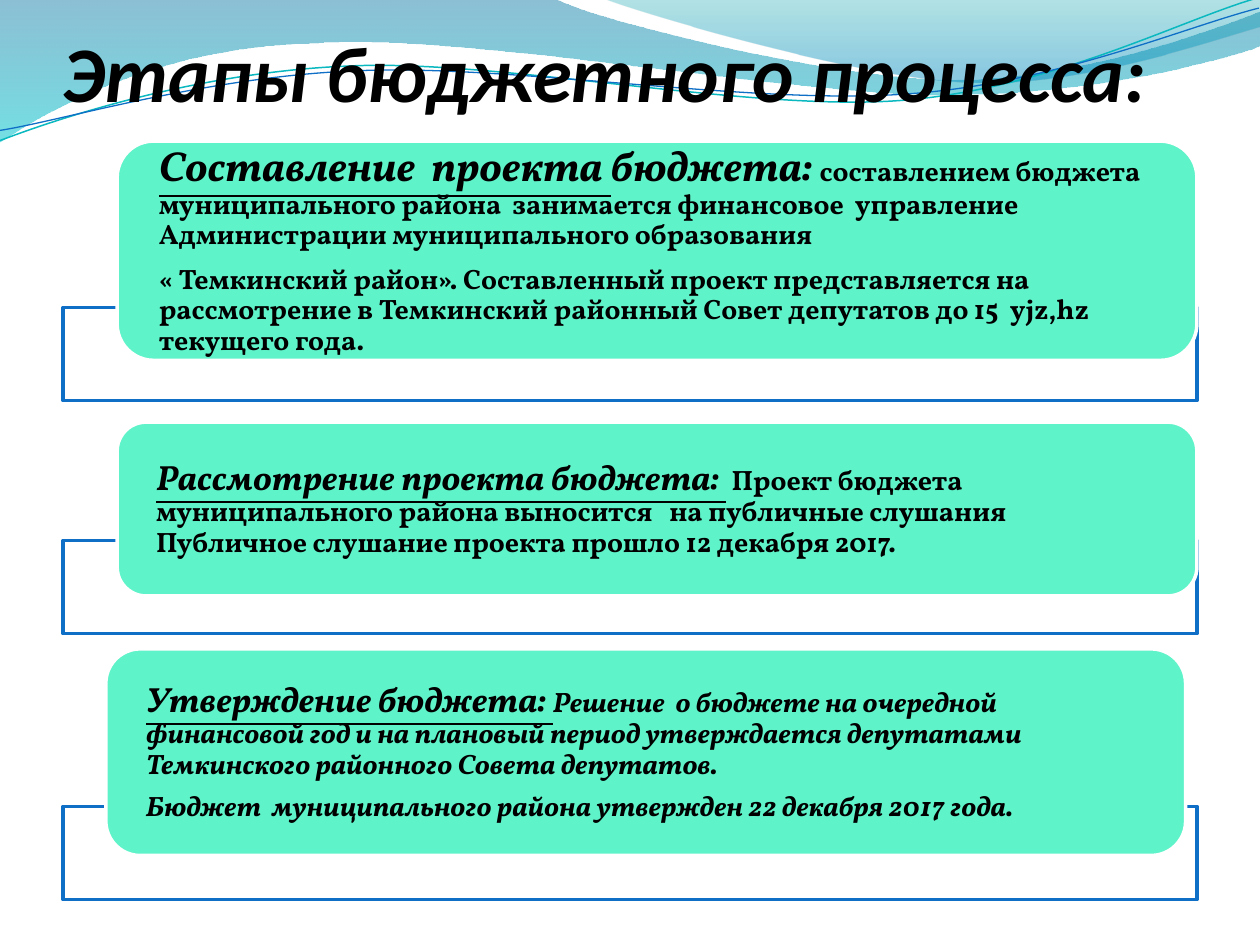
from dataclasses import dataclass

from lxml import etree
from pptx import Presentation
from pptx.dml.color import RGBColor
from pptx.enum.shapes import MSO_SHAPE
from pptx.enum.text import MSO_ANCHOR
from pptx.oxml.ns import qn
from pptx.util import Inches, Pt

RECTANGLE = MSO_SHAPE.RECTANGLE
ROUNDED = MSO_SHAPE.ROUNDED_RECTANGLE
MIDDLE = MSO_ANCHOR.MIDDLE
BOTTOM = MSO_ANCHOR.BOTTOM


@dataclass(frozen=True)
class Theme:
    title_font: str = "Calibri"
    body_font: str = "Vollkorn"
    title_size: float = 45
    first_heading_size: float = 24
    heading_size: float = 20
    body_size: float = 16
    ink: str = "000000"
    white: str = "FFFFFF"
    mint: str = "5FF3CA"
    blue: str = "0F6FC6"
    teal: str = "0AB8BF"
    wide_wave: tuple = ((0, "0074A1", 45), (1, "00C6CF", 55))
    right_wave: tuple = ((0, "00A1A9", 30), (0.8, "008BBF", 45))


@dataclass(frozen=True)
class Span:
    text: str
    size: float
    italic: bool = False
    underline: bool = False


class SlideWriter:
    def __init__(self, page, theme):
        self.page = page
        self.theme = theme

    def set_opacity(self, shape, percents):
        colors = shape._element.spPr.iter(qn("a:srgbClr"))
        for color, percent in zip(colors, percents):
            etree.SubElement(color, qn("a:alpha"), val=str(percent * 1000))

    def outline(self, shape, color, width):
        shape.line.color.rgb = RGBColor.from_string(color)
        shape.line.width = Pt(width)

    def freeform(self, start, segments, closed):
        points = [(Inches(x), Inches(y)) for segment in segments for x, y in segment]
        builder = self.page.shapes.build_freeform(Inches(start[0]), Inches(start[1]))
        builder.add_line_segments(points, close=closed)
        shape = builder.convert_to_shape()
        shape.shadow.inherit = False
        steps = iter(list(shape._element.iter(qn("a:lnTo"))))
        for segment in segments:
            first, *others = [next(steps) for _ in segment]
            if others:
                curve = etree.Element(qn("a:cubicBezTo"))
                first.addprevious(curve)
                for step in (first, *others):
                    curve.append(step[0])
                    step.getparent().remove(step)
        return shape

    def wave(self, start, segments, stops):
        shape = self.freeform(start, segments, True)
        shape.line.fill.background()
        shape.fill.gradient()
        shape.fill.gradient_angle = 270
        for stop, (position, color, _) in zip(shape.fill.gradient_stops, stops):
            stop.position = position
            stop.color.rgb = RGBColor.from_string(color)
        self.set_opacity(shape, [opacity for _, _, opacity in stops])

    def strand(self, start, segments, color, width):
        shape = self.freeform(start, segments, False)
        shape.rotation = 357.3
        shape.fill.background()
        self.outline(shape, color, width)

    def panel(self, kind, frame, fill, line, opacity=None):
        shape = self.page.shapes.add_shape(kind, *map(Inches, frame))
        shape.shadow.inherit = False
        shape.fill.solid()
        shape.fill.fore_color.rgb = RGBColor.from_string(fill)
        if opacity is not None:
            self.set_opacity(shape, [opacity])
        self.outline(shape, line, 2)

    def space_after(self, para, percent):
        spacing = etree.SubElement(para._p.get_or_add_pPr(), qn("a:spcAft"))
        etree.SubElement(spacing, qn("a:spcPct"), val=str(percent * 1000))

    def text(self, frame, paragraphs, font, anchor, margins, line_spacing=None, after=None):
        box = self.page.shapes.add_textbox(*map(Inches, frame))
        body = box.text_frame
        body.word_wrap = True
        body.vertical_anchor = anchor
        body.margin_left, body.margin_top, body.margin_right, body.margin_bottom = map(
            Inches, margins)
        for index, spans in enumerate(paragraphs):
            para = body.add_paragraph() if index else body.paragraphs[0]
            para.line_spacing = line_spacing
            if after is not None:
                self.space_after(para, after)
            for span in spans:
                run = para.add_run()
                run.text = span.text
                run.font.name = font
                run.font.size = Pt(span.size)
                run.font.bold = True
                run.font.italic = span.italic
                run.font.underline = span.underline
                run.font.color.rgb = RGBColor.from_string(self.theme.ink)

    def stage(self, bar_top, left, top, height, paragraphs):
        theme = self.theme
        width = 8.57
        inset = round(0.05 * height, 2)
        self.panel(RECTANGLE, (0.5, bar_top, 9, 0.74), theme.white, theme.blue, 90)
        self.panel(ROUNDED, (left, top, width, height), theme.mint, theme.white)
        self.text((left + inset, top + inset, width - 2 * inset, height - 2 * inset),
                  paragraphs, theme.body_font, MIDDLE, (0.24, 0, 0.24, 0), 0.9, 35)


def draw_waves(writer):
    theme = writer.theme
    writer.wave((0, 0), [
        [(4.4, -0.01)],
        [(4.76, 0.17), (6.64, 0.63), (7.58, 0.63)],
        [(8.53, 0.63), (9.58, 0.26), (10, 0.09)],
        [(10.01, 0.36)],
        [(9.83, 0.44), (8.7, 0.76), (7.46, 0.75)],
        [(6.22, 0.75), (3.82, 0.28), (2.57, 0.34)],
        [(1.29, 0.36), (0.46, 0.83), (-0.01, 1.13)],
        [(0, 0)],
    ], theme.wide_wave)
    writer.wave((4.79, -0.01), [
        [(5.09, 0.11), (6.82, 0.62), (7.69, 0.65)],
        [(8.56, 0.69), (9.61, 0.32), (10, 0.21)],
        [(10, 0)],
        [(4.79, -0.01)],
    ], theme.right_wave)
    writer.strand((-0.02, 0.88), [
        [(0.47, 0.72), (1.58, 0.41), (2.78, 0.42)],
        [(3.96, 0.42), (5.91, 0.93), (7.12, 0.9)],
        [(8.32, 0.87), (9.4, 0.36), (10, 0.22)],
    ], theme.teal, 0.85)
    writer.strand((-0.02, 0.8), [
        [(0.46, 0.75), (1.64, 0.45), (2.83, 0.46)],
        [(4.03, 0.46), (5.96, 0.88), (7.16, 0.85)],
        [(8.35, 0.83), (9.42, 0.42), (10.01, 0.3)],
    ], theme.blue, 0.75)


def main():
    theme = Theme()
    deck = Presentation()
    deck.slide_width, deck.slide_height = Inches(10), Inches(7.5)
    writer = SlideWriter(deck.slides.add_slide(deck.slide_layouts[6]), theme)

    draw_waves(writer)
    writer.text((0.5, 0.16, 9, 0.78),
                [[Span("Этапы бюджетного процесса:", theme.title_size, True)]],
                theme.title_font, BOTTOM, (0, 0.05, 0, 0))

    large, medium, small = theme.first_heading_size, theme.heading_size, theme.body_size
    drafting = [
        [Span("Составление  проекта ", large, True, True),
         Span("бюджета: ", large, True),
         Span("составлением бюджета муниципального района  занимается финансовое  "
              "управление Администрации муниципального образования", small)],
        [Span("« Темкинский район». Составленный проект представляется на рассмотрение "
              "в Темкинский районный Совет депутатов до 15  yjz,hz  текущего года.", small)],
    ]
    review = [
        [Span("Рассмотрение проекта бюджета: ", medium, True, True),
         Span(" Проект бюджета муниципального района выносится   на публичные слушания   "
              "Публичное слушание проекта прошло 12 декабря 2017.", small)],
    ]
    approval = [
        [Span("Утверждение бюджета: ", medium, True, True),
         Span("Решение  о бюджете на очередной финансовой год и на плановый период "
              "утверждается депутатами Темкинского районного Совета депутатов.", small, True)],
        [Span("Бюджет  муниципального района утвержден 22 декабря 2017 года.", small, True)],
    ]
    writer.stage(2.44, 0.93, 1.12, 1.74, drafting)
    writer.stage(4.29, 0.93, 3.35, 1.38, review)
    writer.stage(6.4, 0.84, 5.15, 1.64, approval)
    deck.save("out.pptx")


if __name__ == "__main__":
    main()
